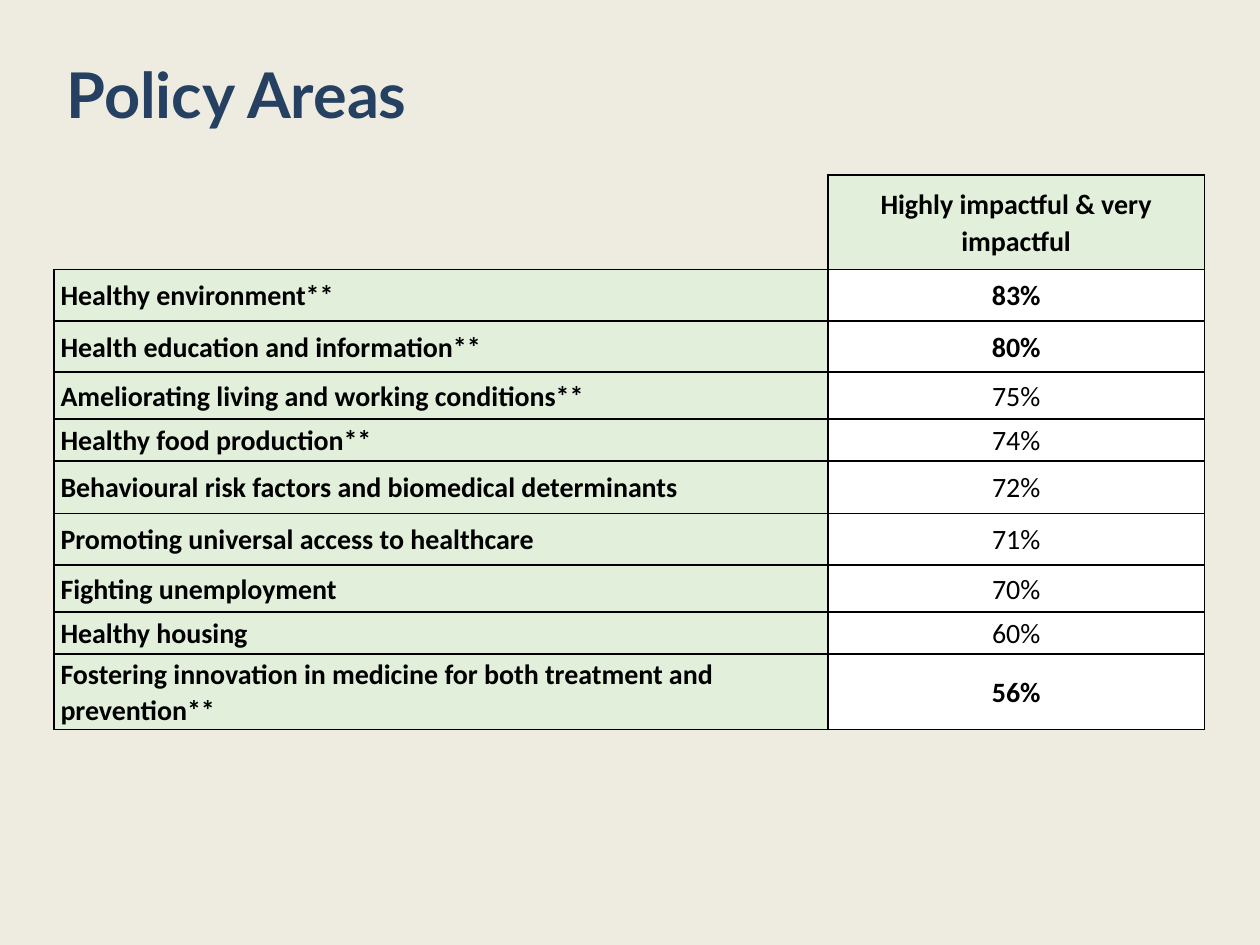
from typing import NamedTuple

from lxml.etree import SubElement
from pptx import Presentation
from pptx.dml.color import RGBColor
from pptx.enum.text import MSO_ANCHOR, PP_ALIGN
from pptx.oxml.ns import qn
from pptx.util import Cm, Pt

BACKGROUND, NAVY, BLACK = "EEECE1", "254061", "000000"
GREEN, WHITE = "E2EFDA", "FFFFFF"
LEFT, TABLE_TOP = Cm(1.09), Cm(3.53)
COLUMN_WIDTHS = (Cm(15.6), Cm(7.59))
HEADER_HEIGHT = Cm(1.9)


class PolicyArea(NamedTuple):
    name: str
    share: str
    height: float  # centimetres
    highlighted: bool = False


POLICY_AREAS = (
    PolicyArea("Healthy environment**", "83%", 1.04, True),
    PolicyArea("Health education and information**", "80%", 1.03, True),
    PolicyArea("Ameliorating living and working conditions**", "75%", 0.95),
    PolicyArea("Healthy food production**", "74%", 0.84),
    PolicyArea("Behavioural risk factors and biomedical determinants", "72%", 1.06),
    PolicyArea("Promoting universal access to healthcare", "71%", 1.04),
    PolicyArea("Fighting unemployment", "70%", 0.95),
    PolicyArea("Healthy housing", "60%", 0.84),
    PolicyArea("Fostering innovation in medicine for both treatment and prevention**",
               "56%", 1.53, True),
)


def color(value: str) -> RGBColor:
    return RGBColor.from_string(value)


def format_runs(paragraph, font_name: str, size: float, font_color: str, bold: bool) -> None:
    for run in paragraph.runs:
        run.font.name = font_name
        run.font.size = Pt(size)
        run.font.bold = bold
        run.font.color.rgb = color(font_color)


def set_borders(cell, visible_sides: str) -> None:
    """Draw black lines on the given sides (L, R, T, B) and none on the others."""
    properties = cell._tc.get_or_add_tcPr()
    for position, side in enumerate("LRTB"):
        line = SubElement(properties, qn(f"a:ln{side}"), w=str(Pt(1)))
        if side in visible_sides:
            fill = SubElement(line, qn("a:solidFill"))
            SubElement(fill, qn("a:srgbClr"), val=BLACK)
        else:
            SubElement(line, qn("a:noFill"))
        properties.insert(position, line)  # lines come before the cell fill


def fill_cell(cell, text: str, fill_color: str, alignment: PP_ALIGN, bold: bool) -> None:
    cell.margin_left = cell.margin_right = Cm(0.13)
    cell.margin_top = cell.margin_bottom = 0
    cell.vertical_anchor = MSO_ANCHOR.MIDDLE
    cell.fill.solid()
    cell.fill.fore_color.rgb = color(fill_color)
    cell.text_frame.text = text
    paragraph = cell.text_frame.paragraphs[0]
    paragraph.alignment = alignment
    paragraph.line_spacing = 1.07
    format_runs(paragraph, "Calibri", 16, BLACK, bold)
    set_borders(cell, "LRTB")


def add_title(slide, text: str) -> None:
    title = slide.shapes.title
    title.left, title.top, title.width, title.height = LEFT, Cm(0.91), Cm(22.86), Cm(4.19)
    title.text_frame.text = text
    title.text_frame.vertical_anchor = MSO_ANCHOR.TOP
    paragraph = title.text_frame.paragraphs[0]
    paragraph.alignment = PP_ALIGN.JUSTIFY
    paragraph.line_spacing = 1.06
    paragraph.space_before = Pt(7.2)
    paragraph.space_after = Pt(8)
    format_runs(paragraph, "Lato", 36, NAVY, True)


def add_policy_table(slide) -> None:
    heights = [HEADER_HEIGHT] + [Cm(area.height) for area in POLICY_AREAS]
    table = slide.shapes.add_table(len(heights), len(COLUMN_WIDTHS), LEFT, TABLE_TOP,
                                   sum(COLUMN_WIDTHS), sum(heights)).table
    table.first_row = table.horz_banding = False
    for column, width in zip(table.columns, COLUMN_WIDTHS):
        column.width = width
    for row, height in zip(table.rows, heights):
        row.height = height

    # Header row with an open corner
    corner = table.cell(0, 0)
    corner.fill.background()
    set_borders(corner, "RB")
    fill_cell(table.cell(0, 1), "Highly impactful & very impactful",
              GREEN, PP_ALIGN.CENTER, True)

    # One row for each policy area
    for row_index, area in enumerate(POLICY_AREAS, start=1):
        fill_cell(table.cell(row_index, 0), area.name, GREEN, PP_ALIGN.LEFT, True)
        fill_cell(table.cell(row_index, 1), area.share, WHITE, PP_ALIGN.CENTER,
                  area.highlighted)


def main() -> None:
    presentation = Presentation()
    presentation.slide_width, presentation.slide_height = Cm(25.4), Cm(19.05)
    slide = presentation.slides.add_slide(presentation.slide_layouts[5])
    slide.background.fill.solid()
    slide.background.fill.fore_color.rgb = color(BACKGROUND)
    add_title(slide, "Policy Areas")
    add_policy_table(slide)
    presentation.save("out.pptx")


if __name__ == "__main__":
    main()
